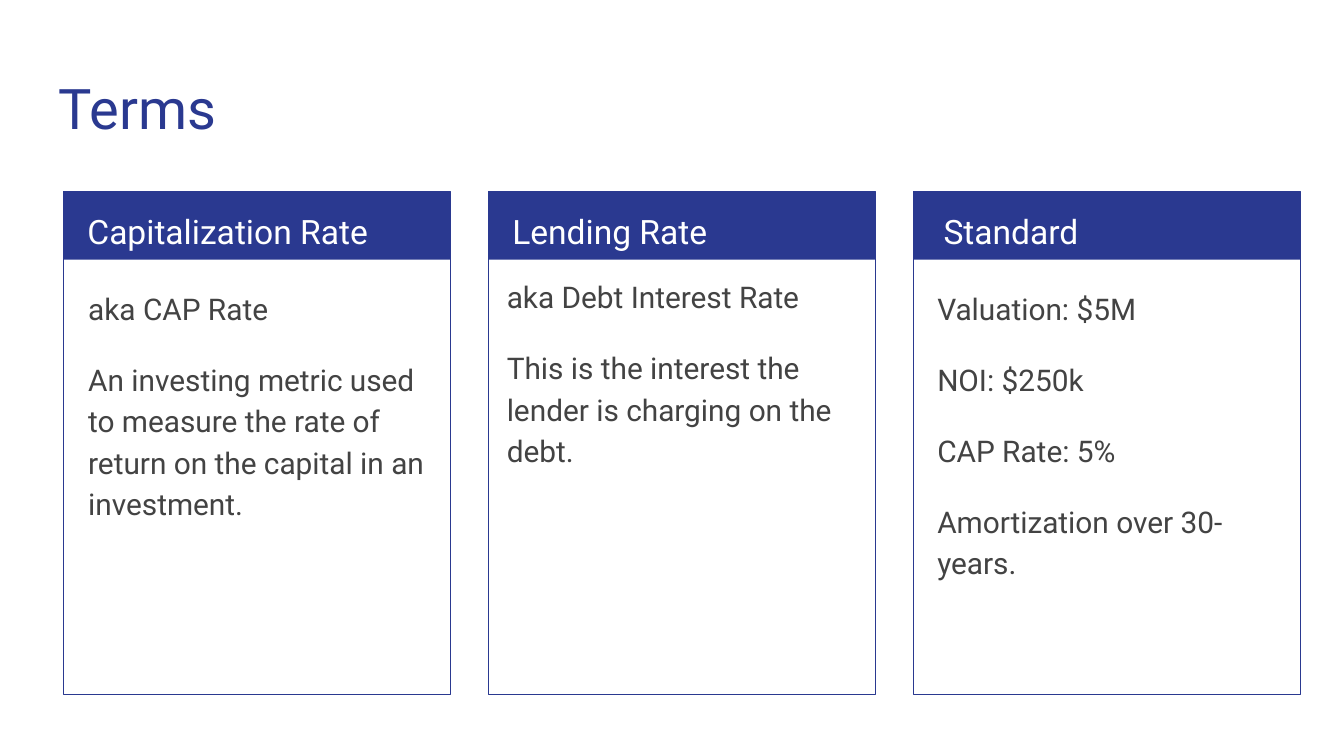
"""Build the Terms slide: three headed cards of lending definitions."""
import dataclasses

import pptx
import pptx.dml.color
import pptx.enum.shapes
import pptx.enum.text
import pptx.util
from pptx.oxml.ns import qn
from lxml import etree

PAGE_WIDTH, PAGE_HEIGHT = 1920, 1080
EMU_PER_PX = pptx.util.Inches(10) / PAGE_WIDTH


@dataclasses.dataclass(frozen=True)
class Theme:
    """Colours, font and type sizes of the slide."""
    font: str = "Roboto"
    accent: str = "2A3990"
    light: str = "FFFFFF"
    ink: str = "434343"
    title_size: int = 30
    heading_size: int = 18
    body_size: int = 16
    leading: float = 1.15
    outline: float = 0.75
    inset: int = 19


@dataclasses.dataclass(frozen=True)
class Card:
    """One term: heading, paragraphs, and where its list sits."""
    heading: str
    lines: tuple
    list_left: int
    list_top: int
    heading_indent: int = 0


CARDS = (
    Card("Capitalization Rate",
         ("aka CAP Rate",
          "An investing metric used to measure the rate of return "
          "on the capital in an investment."), 107, 389),
    Card("Lending Rate",
         ("aka Debt Interest Rate",
          "This is the interest the lender is charging on the debt."),
         705, 372),
    Card("Standard",
         ("Valuation: $5M", "NOI: $250k", "CAP Rate: 5%",
          "Amortization over 30-years."), 1320, 389, heading_indent=9),
)
CARD_LEFT, CARD_TOP, CARD_STEP = 91, 274, 607
CARD_WIDTH, CARD_HEIGHT, BAR_HEIGHT = 553, 718, 97


def px(length):
    """Turn px into EMU."""
    return pptx.util.Emu(round(length * EMU_PER_PX))


def rgb(value):
    """Turn a hex string into a colour."""
    return pptx.dml.color.RGBColor.from_string(value)


def write_text(box, lines, *, font, size, color, inset, leading=1.0, gap=0,
               indent=0):
    """Write unbulleted, left-aligned paragraphs with a gap between them."""
    frame = box.text_frame
    frame.text = "\n".join(lines)
    frame.word_wrap = True
    frame.auto_size = pptx.enum.text.MSO_AUTO_SIZE.NONE
    frame.vertical_anchor = pptx.enum.text.MSO_ANCHOR.TOP
    frame.margin_left = frame.margin_right = px(inset)
    frame.margin_top = frame.margin_bottom = px(inset)
    for index, para in enumerate(frame.paragraphs):
        para.alignment = pptx.enum.text.PP_ALIGN.LEFT
        para.line_spacing = leading
        para.space_before = pptx.util.Pt(gap if index else 0)
        para.space_after = pptx.util.Pt(0)
        properties = para._p.get_or_add_pPr()
        properties.set("marL", str(px(indent)))
        properties.set("indent", "0")
        etree.SubElement(properties, qn("a:buNone"))
        for span in para.runs:
            span.font.name = font
            span.font.size = pptx.util.Pt(size)
            span.font.bold = False
            span.font.color.rgb = rgb(color)


class SlideBuilder:
    """Hold the theme and the current slide, and add elements to it."""

    def __init__(self, page, theme):
        """Keep the page, its theme and its free body placeholders."""
        self.page = page
        self.theme = theme
        self.bodies = [box for box in page.placeholders
                       if box.placeholder_format.idx != 0]

    def place(self, box, left, top, width, height):
        """Move and size a box."""
        box.left, box.top = px(left), px(top)
        box.width, box.height = px(width), px(height)

    def title(self, text, *area):
        """Fill the title placeholder."""
        box = self.page.shapes.title
        self.place(box, *area)
        write_text(box, [text], font=self.theme.font,
                   size=self.theme.title_size, color=self.theme.accent,
                   inset=self.theme.inset)

    def rectangle(self, *area, fill=None, line=None):
        """Add a rectangle that is filled, outlined or both."""
        box = self.page.shapes.add_shape(
            pptx.enum.shapes.MSO_SHAPE.RECTANGLE, *map(px, area))
        box.shadow.inherit = False
        if fill:
            box.fill.solid()
            box.fill.fore_color.rgb = rgb(fill)
        else:
            box.fill.background()
        if line:
            box.line.color.rgb = rgb(line)
            box.line.width = pptx.util.Pt(self.theme.outline)
        else:
            box.line.fill.background()

    def heading(self, text, *area, indent=0):
        """Add a card heading."""
        box = self.page.shapes.add_textbox(*map(px, area))
        write_text(box, [text], font=self.theme.font,
                   size=self.theme.heading_size, color=self.theme.light,
                   inset=self.theme.inset, leading=self.theme.leading,
                   indent=indent)

    def body(self, lines, *area):
        """Fill the next free body placeholder."""
        box = self.bodies.pop()
        self.place(box, *area)
        write_text(box, lines, font=self.theme.font,
                   size=self.theme.body_size, color=self.theme.ink,
                   inset=self.theme.inset, leading=self.theme.leading,
                   gap=self.theme.body_size)

    def card(self, card, left):
        """Add a header bar, frame, heading and list."""
        self.rectangle(left, CARD_TOP, CARD_WIDTH, BAR_HEIGHT,
                       fill=self.theme.accent)
        self.rectangle(left, CARD_TOP, CARD_WIDTH, CARD_HEIGHT,
                       line=self.theme.accent)
        self.heading(card.heading, left + 15, CARD_TOP, 524, 96,
                     indent=card.heading_indent)
        self.body(card.lines, card.list_left, card.list_top, 520, 588)

    def remove_unused(self):
        """Remove the body placeholders left empty."""
        for box in self.bodies:
            box.element.getparent().remove(box.element)


def main():
    """Build and save the deck."""
    deck = pptx.Presentation()
    deck.slide_width, deck.slide_height = px(PAGE_WIDTH), px(PAGE_HEIGHT)
    page = deck.slides.add_slide(deck.slide_layouts.get_by_name("Comparison"))
    builder = SlideBuilder(page, Theme())
    builder.title("Terms", 65, 86, 1789, 127)
    for index, card in enumerate(CARDS):
        builder.card(card, CARD_LEFT + index * CARD_STEP)
    builder.remove_unused()
    deck.save("out.pptx")


if __name__ == "__main__":
    main()
